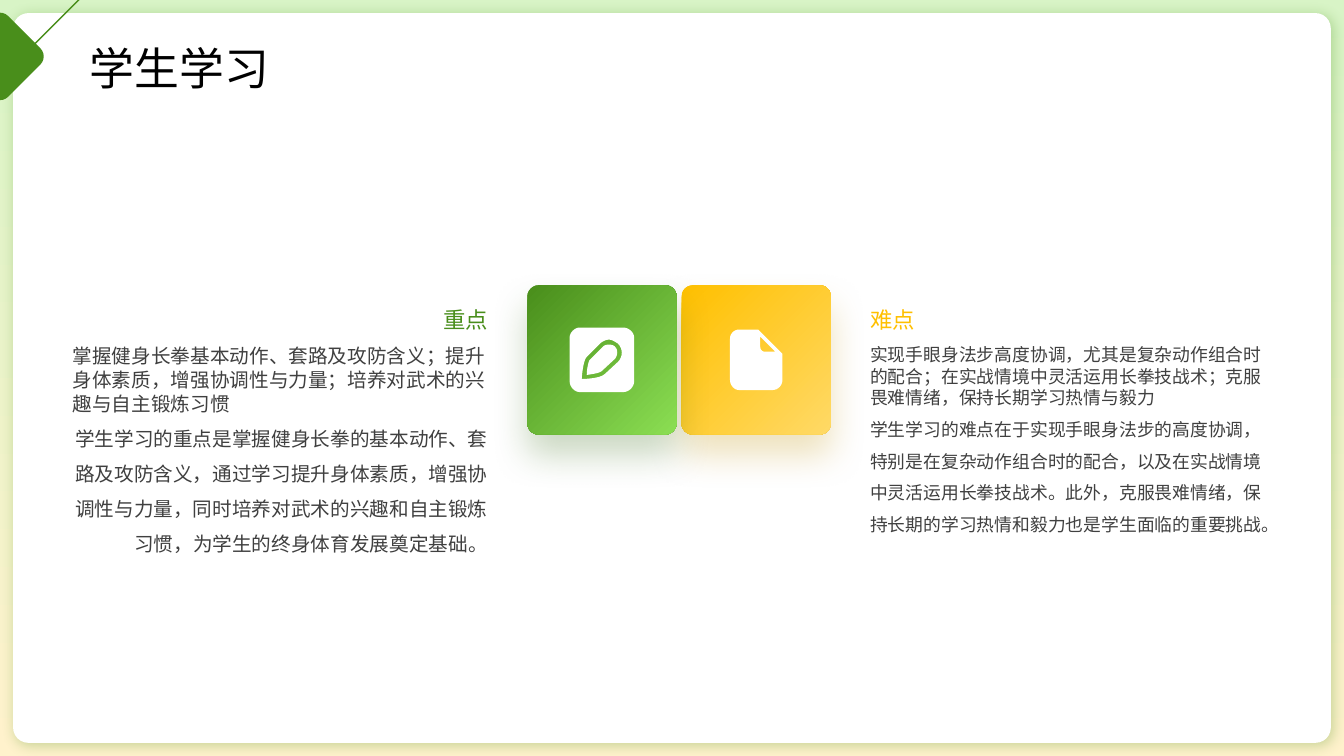
"""Build a slide that sets the key points of study beside the hard ones."""
from lxml.etree import SubElement
from pptx import Presentation
from pptx.dml.color import RGBColor
from pptx.enum.shapes import MSO_SHAPE as Kind
from pptx.enum.text import MSO_ANCHOR as Anchor, PP_ALIGN as Align
from pptx.oxml.ns import qn
from pptx.util import Inches, Pt

FONT = "Noto Sans CJK SC"
GREEN, GOLD, GREY, WHITE = "498E1B", "FFC000", "404040", "FFFFFF"
TITLE = "学生学习"

PEN = [
    [(6.04, 3.42), (6.06, 3.42, 6.08, 3.42, 6.1, 3.44),
     (6.13, 3.47, 6.13, 3.52, 6.1, 3.56), (5.97, 3.68),
     (5.95, 3.7, 5.89, 3.71, 5.82, 3.72),
     (5.82, 3.65, 5.84, 3.58, 5.85, 3.57), (5.98, 3.44),
     (6, 3.42, 6.02, 3.42, 6.04, 3.42)],
    [(6.04, 3.37), (6.01, 3.37, 5.97, 3.39, 5.95, 3.41), (5.82, 3.54),
     (5.78, 3.58, 5.77, 3.76, 5.77, 3.76),
     (5.77, 3.76, 5.95, 3.76, 6, 3.71), (6.13, 3.59),
     (6.18, 3.54, 6.18, 3.46, 6.13, 3.41),
     (6.1, 3.39, 6.07, 3.37, 6.04, 3.37)],
    [(5.75, 3.25), (6.18, 3.25), (6.24, 3.25, 6.29, 3.3, 6.29, 3.35),
     (6.29, 3.78), (6.29, 3.84, 6.24, 3.89, 6.18, 3.89), (5.75, 3.89),
     (5.7, 3.89, 5.65, 3.84, 5.65, 3.78), (5.65, 3.35),
     (5.65, 3.3, 5.7, 3.25, 5.75, 3.25)],
]
PAGE = [
    [(7.54, 3.34), (7.54, 3.44), (7.54, 3.47, 7.56, 3.49, 7.59, 3.49),
     (7.69, 3.49)],
    [(7.33, 3.27), (7.52, 3.27), (7.53, 3.28), (7.75, 3.5), (7.76, 3.51),
     (7.76, 3.77), (7.76, 3.82, 7.72, 3.87, 7.66, 3.87), (7.33, 3.87),
     (7.28, 3.87, 7.24, 3.82, 7.24, 3.77), (7.24, 3.36),
     (7.24, 3.31, 7.28, 3.27, 7.33, 3.27)],
]
CORNER = [
    [(0.06, 0.6), (0.14, 0.6, 0.21, 0.57, 0.27, 0.51), (0.83, -0.05),
     (-0.71, -0.05), (-0.14, 0.51), (-0.09, 0.57, -0.01, 0.6, 0.06, 0.6)],
]
SIDES = [
    dict(head="难点", tone=GOLD, pale="FFD966", shade="BF9000", icon=PAGE,
         tile=6.76, left=8.63, wide=3.97, align=Align.LEFT, size=12.7,
         pitch=(15.4, 22.6), body=[
             "实现手眼身法步高度协调，尤其是复杂动作组合时的配合；在实战情境中灵活运用长拳技战术；克服畏难情绪，保持长期学习热情与毅力",
             "学生学习的难点在于实现手眼身法步的高度协调，特别是在复杂动作组合时的配合，以及在实战情境中灵活运用长拳技战术。此外，克服畏难情绪，保持长期的学习热情和毅力也是学生面临的重要挑战。"]),
    dict(head="重点", tone=GREEN, pale="8BDE53", shade="376B14", icon=PEN,
         tile=5.23, left=0.72, wide=4.12, align=Align.RIGHT, size=14,
         pitch=(17, 25), body=[
             "掌握健身长拳基本动作、套路及攻防含义；提升身体素质，增强协调性与力量；培养对武术的兴趣与自主锻炼习惯",
             "学生学习的重点是掌握健身长拳的基本动作、套路及攻防含义，通过学习提升身体素质，增强协调性与力量，同时培养对武术的兴趣和自主锻炼习惯，为学生的终身体育发展奠定基础。"]),
]


def hue(code):
    return RGBColor.from_string(code)


def paint(shape, fill=None, line=None, angle=0):
    shape.shadow.inherit = False
    if fill is None:
        shape.fill.background()
    elif isinstance(fill, str):
        shape.fill.solid()
        shape.fill.fore_color.rgb = hue(fill)
    else:
        shape.fill.gradient()
        shape.fill.gradient_angle = angle
        for stop, code in zip(shape.fill.gradient_stops, fill):
            stop.color.rgb = hue(code)
    if line:
        shape.line.color.rgb = hue(line)
        shape.line.width = Pt(1)
    else:
        shape.line.fill.background()


def block(slide, kind, box, fill, angle=0, adj=None):
    shape = slide.shapes.add_shape(kind, *map(Inches, box))
    if adj is not None:
        shape.adjustments[0] = adj
    paint(shape, fill, angle=angle)
    return shape


def glow(shape, code, alpha, blur, dist, turn):
    effects = shape._element.spPr.find(qn("a:effectLst"))
    outer = SubElement(effects, qn("a:outerShdw"), blurRad=str(Pt(blur)),
                       dist=str(Pt(dist)), dir=str(turn * 60000),
                       rotWithShape="0")
    tint = SubElement(outer, qn("a:srgbClr"), val=code)
    SubElement(tint, qn("a:alpha"), val=str(alpha * 1000))


def trace(loop, steps=8):
    points = [loop[0]]
    for part in loop[1:]:
        if len(part) == 2:
            points.append(part)
            continue
        knots = [points[-1], part[:2], part[2:4], part[4:]]
        for step in range(1, steps + 1):
            t = step / steps
            u = 1 - t
            mix = (u ** 3, 3 * u * u * t, 3 * u * t * t, t ** 3)
            points.append(tuple(sum(m * k[i] for m, k in zip(mix, knots))
                                for i in (0, 1)))
    return [(Inches(x), Inches(y)) for x, y in points]


def outline(slide, loops, **look):
    first, *rest = map(trace, loops)
    pen = slide.shapes.build_freeform(*first[0])
    pen.add_line_segments(first[1:])
    for loop in rest:
        pen.move_to(*loop[0])
        pen.add_line_segments(loop[1:])
    paint(pen.convert_to_shape(), **look)


def write(slide, box, lines, size, color, anchor=Anchor.TOP):
    frame = slide.shapes.add_textbox(*map(Inches, box)).text_frame
    frame.word_wrap = True
    frame.vertical_anchor = anchor
    frame.margin_left = frame.margin_right = 0
    frame.margin_top = frame.margin_bottom = 0
    for index, (text, align, pitch) in enumerate(lines):
        para = frame.add_paragraph() if index else frame.paragraphs[0]
        para.alignment = align
        para.line_spacing = pitch
        run = para.add_run()
        run.text = text
        run.font.size = Pt(size)
        run.font.color.rgb = hue(color)
        run.font.name = FONT
        SubElement(run._r.get_or_add_rPr(), qn("a:ea"), typeface=FONT)


def main():
    deck = Presentation()
    deck.slide_width, deck.slide_height = Inches(13.33), Inches(7.5)
    slide = deck.slides.add_slide(deck.slide_layouts[6])

    block(slide, Kind.RECTANGLE, (0, 0, 13.33, 7.5),
          ("FFF2CC", "D8F4C6"), angle=90)
    panel = block(slide, Kind.ROUNDED_RECTANGLE, (0.13, 0.13, 13.07, 7.24),
                  WHITE, adj=0.021)
    glow(panel, GREEN, 30, 10, 3, 45)

    for side in SIDES:
        tile = block(slide, Kind.ROUNDED_RECTANGLE,
                     (side["tile"], 2.83, 1.48, 1.48),
                     (side["tone"], side["pale"]), angle=315, adj=0.075)
        glow(tile, side["shade"], 25, 26, 15, 90)
        outline(slide, side["icon"], fill=WHITE)
        left, wide, align = side["left"], side["wide"], side["align"]
        write(slide, (left, 2.42, wide, 0.88), [(side["head"], align, 1.3)],
              16, side["tone"], Anchor.BOTTOM)
        tight, loose = map(Pt, side["pitch"])
        brief, full = side["body"]
        write(slide, (left, 3.41, wide, 2.11),
              [(brief, Align.LEFT, tight), (full, align, loose)],
              side["size"], GREY)

    outline(slide, CORNER, line=GREEN)
    gem = block(slide, Kind.ROUNDED_RECTANGLE, (-0.34, 0.22, 0.68, 0.68), GREEN)
    gem.rotation = 45
    write(slide, (0.89, 0.26, 8.51, 0.47), [(TITLE, Align.LEFT, Pt(64))],
          32, "000000", Anchor.MIDDLE)
    deck.save("out.pptx")


if __name__ == "__main__":
    main()
